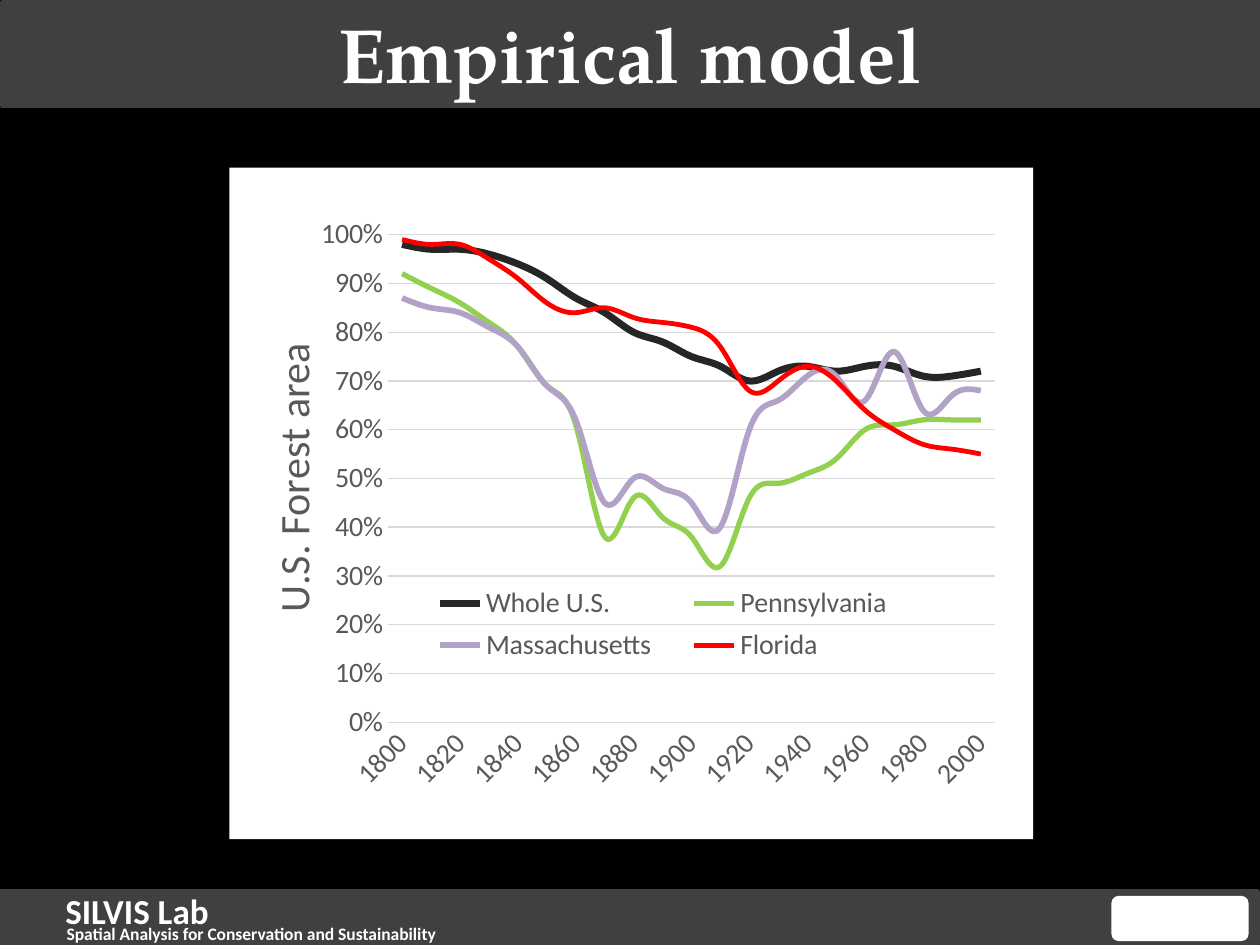
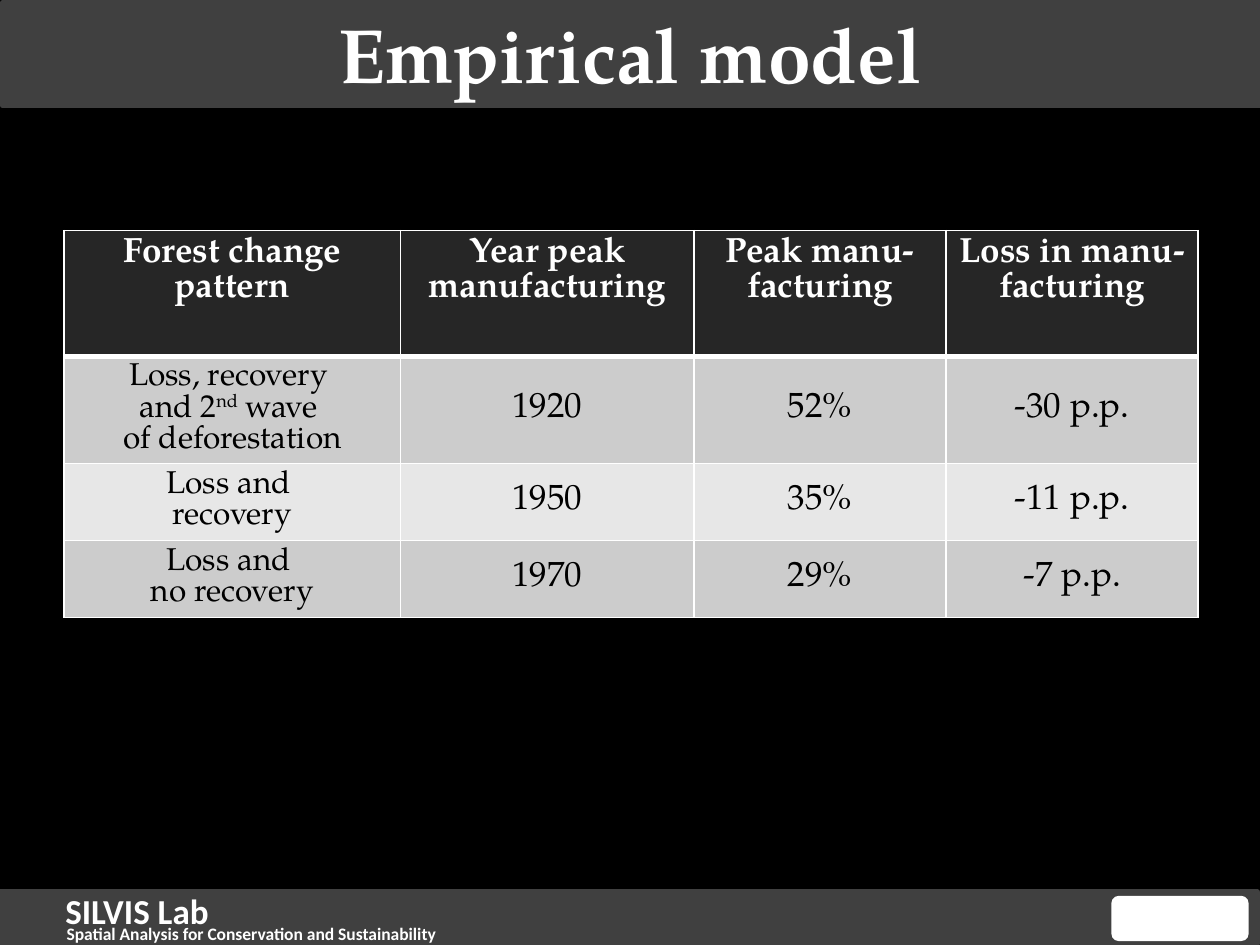
from pptx import Presentation
from pptx.chart.data import CategoryChartData as ChartData
from pptx.dml.color import RGBColor
from pptx.enum.chart import XL_CHART_TYPE as Kind, XL_LEGEND_POSITION as Side, XL_TICK_MARK as Tick
from pptx.enum.shapes import MSO_SHAPE as Form
from pptx.enum.text import MSO_ANCHOR as Anchor, PP_ALIGN as Align
from pptx.oxml import parse_xml
from pptx.oxml.ns import nsdecls, qn
from pptx.util import Inches, Pt

BLACK = RGBColor(0x00, 0x00, 0x00)
WHITE = RGBColor(0xFF, 0xFF, 0xFF)
BAND = RGBColor(0x40, 0x40, 0x40)
DARK = RGBColor(0x26, 0x26, 0x26)
GREY = RGBColor(0x59, 0x59, 0x59)
GRID = RGBColor(0xD9, 0xD9, 0xD9)
ODD = RGBColor(0xCC, 0xCC, 0xCC)
EVEN = RGBColor(0xE7, 0xE7, 0xE7)
GREEN = RGBColor(0x92, 0xD0, 0x50)
MAUVE = RGBColor(0xB3, 0xA2, 0xC7)
RED = RGBColor(0xFF, 0x00, 0x00)
SERIF, SANS = "TeX Gyre Pagella", "Calibri"

YEARS = [str(year) for year in range(1800, 2001, 10)]
FOREST = [
    ("Whole U.S.", DARK, 4,
     [0.98, 0.97, 0.97, 0.96, 0.94, 0.91, 0.87, 0.84, 0.8, 0.78, 0.75,
      0.73, 0.7, 0.72, 0.73, 0.72, 0.73, 0.73, 0.71, 0.71, 0.72]),
    ("Pennsylvania", GREEN, 3,
     [0.92, 0.89, 0.86, 0.82, 0.77, 0.69, 0.61, 0.38, 0.46, 0.42, 0.38,
      0.32, 0.46, 0.49, 0.51, 0.54, 0.6, 0.61, 0.62, 0.62, 0.62]),
    ("Massachusetts", MAUVE, 3.25,
     [0.87, 0.85, 0.84, 0.81, 0.77, 0.69, 0.62, 0.45, 0.5, 0.48, 0.45,
      0.4, 0.6, 0.66, 0.71, 0.71, 0.66, 0.76, 0.64, 0.67, 0.68]),
    ("Florida", RED, 2.75,
     [0.99, 0.98, 0.98, 0.95, 0.91, 0.86, 0.84, 0.85, 0.83, 0.82, 0.81,
      0.77, 0.68, 0.7, 0.73, 0.7, 0.64, 0.6, 0.57, 0.56, 0.55]),
]
HEADS = ["Forest change pattern", "Year peak manufacturing",
         "Peak manu-facturing", "Loss in manu-facturing"]
ROWS = [
    (["Loss, recovery ", "\n", "and 2", "^nd", " wave ", "\n", "of deforestation"],
     "1920", "52%", "-30 p.p."),
    (["Loss and ", "\n", "recovery"], "1950", "35%", "-11 p.p."),
    (["Loss and ", "\n", "no recovery"], "1970", "29%", "-7 p.p."),
]
WIDTHS = [2.67, 2.33, 2, 2]
HEIGHTS = [1, 0.85, 0.61, 0.61]


def style(font, size, color, face, bold=False):
    """Set the look of a font."""
    font.size, font.name, font.bold = Pt(size), face, bold
    font.color.rgb = color


def add_text(slide, box, text, size, face, align=Align.LEFT, anchor=Anchor.TOP):
    """Add a bold white line of text."""
    frame = slide.shapes.add_textbox(*map(Inches, box)).text_frame
    frame.word_wrap = True
    frame.vertical_anchor = anchor
    para = frame.paragraphs[0]
    para.alignment = align
    run = para.add_run()
    run.text = text
    style(run.font, size, WHITE, face, True)


def add_box(slide, form, box, color, edge=0):
    """Add a plain filled shape, with an edge of the same colour if wanted."""
    shape = slide.shapes.add_shape(form, *map(Inches, box))
    shape.shadow.inherit = False
    shape.fill.solid()
    shape.fill.fore_color.rgb = color
    if edge:
        shape.line.color.rgb = color
        shape.line.width = Pt(edge)
    else:
        shape.line.fill.background()


def add_slide(deck, title):
    """Add a black slide with bands, footer and title."""
    slide = deck.slides.add_slide(deck.slide_layouts[6])
    slide.background.fill.solid()
    slide.background.fill.fore_color.rgb = BLACK
    add_box(slide, Form.RECTANGLE, (0.02, 0.02, 9.98, 0.82), BAND, 3)
    add_box(slide, Form.RECTANGLE, (0, 7.08, 9.98, 0.41), BAND, 3)
    add_text(slide, (0.42, 7.01, 2.43, 0.44), "SILVIS Lab", 20, SANS)
    add_text(slide, (0.43, 7.28, 4.92, 0.17),
             "Spatial Analysis for Conservation and Sustainability", 10, SANS)
    add_box(slide, Form.ROUNDED_RECTANGLE, (8.82, 7.11, 1.09, 0.36), WHITE)
    add_text(slide, (0.01, 0, 9.99, 0.83), title, 44, SERIF, Align.CENTER, Anchor.MIDDLE)
    return slide


def place(part, index, inner=False, **spots):
    """Give a chart part a fixed layout, in shares of the chart."""
    for old in part.findall(qn("c:layout")):
        part.remove(old)
    marks = '<c:layoutTarget val="inner"/>' if inner else ""
    marks += "".join(f'<c:{key}Mode val="edge"/>' for key in "xy")
    marks += "".join(f'<c:{key} val="{val}"/>' for key, val in spots.items())
    part.insert(index, parse_xml(
        f'<c:layout {nsdecls("c")}><c:manualLayout>{marks}</c:manualLayout></c:layout>'))


def style_axes(chart):
    """Set up the year axis and the share axis."""
    years, share = chart.category_axis, chart.value_axis
    for axis in (years, share):
        axis.major_tick_mark = axis.minor_tick_mark = Tick.NONE
        style(axis.tick_labels.font, 16, GREY, SANS)
    years.format.line.color.rgb = GRID
    years.format.line.width = Pt(0.75)
    node = years._element
    node.find(qn("c:txPr")).find(qn("a:bodyPr")).set("rot", "-2700000")
    node.find(qn("c:noMultiLvlLbl")).addprevious(
        parse_xml(f'<c:tickLblSkip {nsdecls("c")} val="2"/>'))
    share.minimum_scale, share.maximum_scale, share.major_unit = 0, 1, 0.1
    share.tick_labels.number_format = "0%"
    share.tick_labels.number_format_is_linked = False
    share.format.line.fill.background()
    share.major_gridlines.format.line.color.rgb = GRID
    share.major_gridlines.format.line.width = Pt(0.75)
    run = share.axis_title.text_frame.paragraphs[0].add_run()
    run.text = "U.S. Forest area"
    style(run.font, 24, GREY, SANS)
    place(share.axis_title._element, 1, x=0.035, y=0.25)


def add_lines(slide, box):
    """Add the line chart of forest area."""
    data = ChartData(number_format="0%")
    data.categories = YEARS
    for name, _, _, vals in FOREST:
        data.add_series(name, vals)
    chart = slide.shapes.add_chart(Kind.LINE, *map(Inches, box), data).chart
    chart.has_title = False
    style(chart.font, 16, BLACK, SANS)
    chart._chartSpace.find(qn("c:txPr")).addprevious(parse_xml(
        f'<c:spPr {nsdecls("c", "a")}><a:solidFill><a:srgbClr val="{WHITE}"/></a:solidFill>'
        '<a:ln><a:noFill/></a:ln></c:spPr>'))
    chart.plots[0].vary_by_categories = False
    for line, (_, color, width, _) in zip(chart.plots[0].series, FOREST):
        line.smooth = True
        line.format.line.color.rgb = color
        line.format.line.width = Pt(width)
    style_axes(chart)
    chart.has_legend = True
    legend = chart.legend
    legend.position = Side.BOTTOM
    legend.include_in_layout = True
    style(legend.font, 16, GREY, SANS)
    place(legend._element, 1, x=0.22, y=0.613, w=0.64, h=0.135)
    place(chart._chartSpace.chart.plotArea, 0, True, x=0.197, y=0.1, w=0.756, h=0.726)


def set_edges(cell, top, base):
    """Draw white borders round a cell."""
    props = cell._tc.get_or_add_tcPr()
    for spot, (side, width) in enumerate(zip("LRTB", (1, 1, top, base))):
        props.insert(spot, parse_xml(
            f'<a:ln{side} {nsdecls("a")} w="{Pt(width)}"><a:solidFill>'
            f'<a:srgbClr val="{WHITE}"/></a:solidFill></a:ln{side}>'))


def fill_cell(cell, parts, size, color, fill, bold=False):
    """Write centred runs in a cell; a caret marks superscript."""
    cell.fill.solid()
    cell.fill.fore_color.rgb = fill
    para = cell.text_frame.paragraphs[0]
    para.alignment = Align.CENTER
    para.line_spacing = Pt(size)
    for part in parts:
        if part == "\n":
            para.add_line_break()
            continue
        run = para.add_run()
        run.text = part.lstrip("^")
        style(run.font, size, color, SERIF, bold)
        if part.startswith("^"):
            run.font._element.set("baseline", "30000")


def add_grid(slide, left, top):
    """Add the table of forest change patterns."""
    table = slide.shapes.add_table(
        len(HEIGHTS), len(WIDTHS), Inches(left), Inches(top),
        Inches(sum(WIDTHS)), Inches(sum(HEIGHTS))).table
    for col, width in zip(table.columns, WIDTHS):
        col.width = Inches(width)
    for row, height in zip(table.rows, HEIGHTS):
        row.height = Inches(height)
    for x, head in enumerate(HEADS):
        cell = table.cell(0, x)
        fill_cell(cell, [head], 20, WHITE, DARK, True)
        set_edges(cell, 1, 3)
    for y, row in enumerate(ROWS, 1):
        for x, item in enumerate(row):
            cell = table.cell(y, x)
            cell.vertical_anchor = Anchor.MIDDLE
            parts, size = ([item], 20) if x else (item, 18)
            fill_cell(cell, parts, size, BLACK, ODD if y % 2 else EVEN)
            set_edges(cell, 3 if y == 1 else 1, 1)


def main():
    """Build and save the deck."""
    deck = Presentation()
    deck.slide_width, deck.slide_height = Inches(10), Inches(7.5)
    title = "Empirical model"
    add_lines(add_slide(deck, title), (1.82, 1.33, 6.38, 5.33))
    add_grid(add_slide(deck, title), 0.51, 1.83)
    deck.save("out.pptx")


if __name__ == "__main__":
    main()
